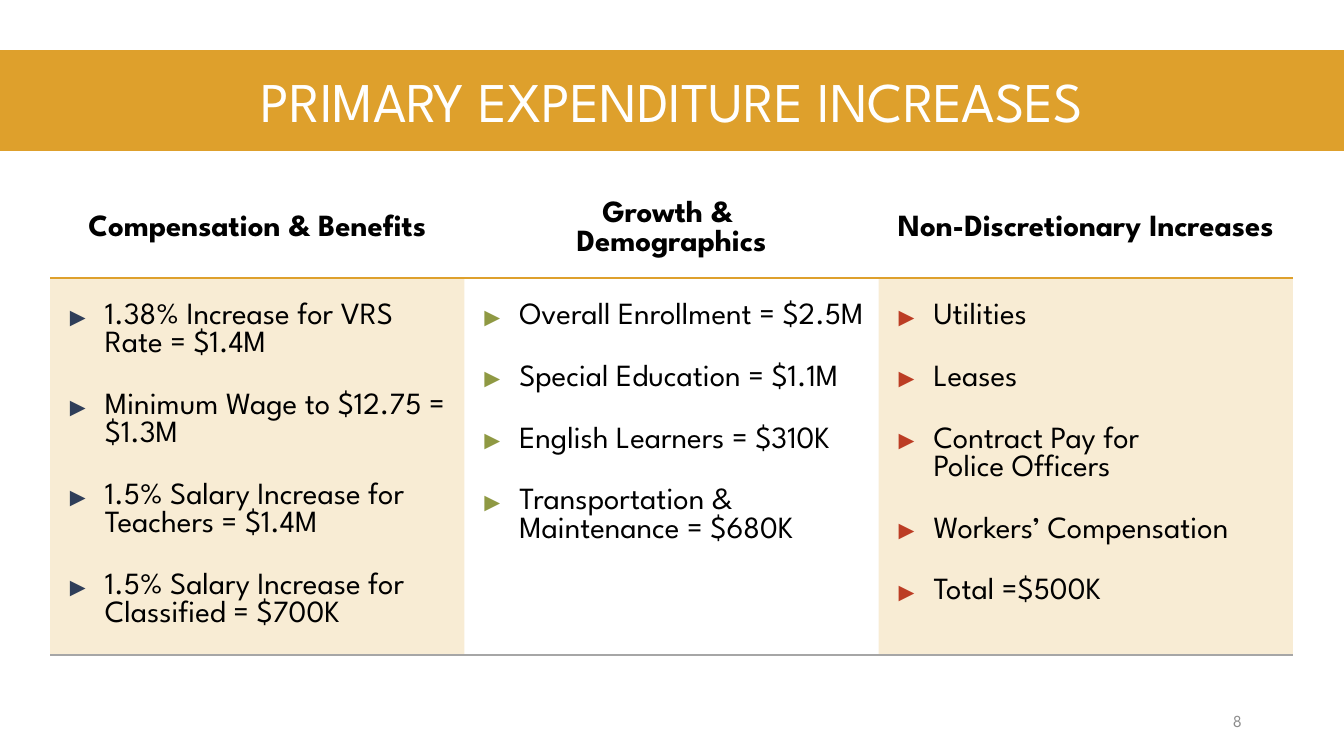
from dataclasses import dataclass

from lxml.etree import SubElement
from pptx import Presentation
from pptx.dml.color import RGBColor
from pptx.enum.shapes import MSO_SHAPE
from pptx.enum.text import MSO_ANCHOR, PP_ALIGN
from pptx.oxml import parse_xml
from pptx.oxml.ns import nsdecls, qn
from pptx.util import Pt

PLAIN = "{2D5ABB26-0587-4C30-8999-92F81FD0307C}"  # table style: no grid


@dataclass(frozen=True)
class Theme:
    font: str = "League Spartan"
    gold: str = "DEA02C"
    white: str = "FFFFFF"
    black: str = "000000"
    gray: str = "8C8C8C"
    rule: str = "A6A6A6"
    navy: str = "2F3E59"
    olive: str = "8F9943"
    red: str = "BC3D24"
    title: int = 40
    body: int = 22
    small: int = 12
    gap: int = 24


THEME = Theme()

COLUMNS = [
    ("Compensation & Benefits", THEME.navy, True, [
        "1.38% Increase for VRS Rate = $1.4M",
        "Minimum Wage to $12.75 = $1.3M",
        "1.5% Salary Increase for Teachers = $1.4M",
        "1.5% Salary Increase for Classified = $700K",
    ]),
    ("Growth & \nDemographics", THEME.olive, False, [
        "Overall Enrollment = $2.5M",
        "Special Education = $1.1M",
        "English Learners = $310K",
        "Transportation & Maintenance = $680K",
    ]),
    ("Non-Discretionary Increases", THEME.red, True, [
        "Utilities",
        "Leases",
        "Contract Pay for \nPolice Officers",
        "Workers’ Compensation",
        "Total =$500K",
    ]),
]


def px(count):
    """Turn slide pixels (100.8 to the inch) into EMU."""
    return round(count * 914400 / 100.8)


def write(para, text, size, color, align=PP_ALIGN.LEFT, bold=False):
    para.text = text
    para.alignment = align
    font = para.font
    font.name, font.size, font.bold = THEME.font, Pt(size), bold
    font.color.rgb = RGBColor.from_string(color)


def bullet(para, color):
    """Give a written paragraph a hanging triangle bullet."""
    props = para._p.get_or_add_pPr()
    props.set("marL", str(px(45)))
    props.set("indent", str(px(-40)))
    last = props.find(qn("a:defRPr"))
    for part in (
        f'<a:buClr {nsdecls("a")}><a:srgbClr val="{color}"/></a:buClr>',
        f'<a:buSzPct {nsdecls("a")} val="85000"/>',
        f'<a:buFont {nsdecls("a")} typeface="Arial"/>',
        f'<a:buChar {nsdecls("a")} char="►"/>',
    ):
        last.addprevious(parse_xml(part))


def pad(cell, side, top, bottom):
    cell.margin_left = cell.margin_right = px(side)
    cell.margin_top, cell.margin_bottom = px(top), px(bottom)


def tint(cell, shaded):
    """Fill a cell with pale gold, or leave it clear."""
    if not shaded:
        cell.fill.background()
        return
    cell.fill.solid()
    cell.fill.fore_color.rgb = RGBColor.from_string(THEME.gold)
    color = cell._tc.tcPr.find(".//" + qn("a:srgbClr"))
    SubElement(color, qn("a:alpha"), val="20000")


def edge(cell, side, color):
    """Draw a one-point border; side is T or B."""
    line = parse_xml(
        f'<a:ln{side} {nsdecls("a")} w="12700"><a:solidFill>'
        f'<a:srgbClr val="{color}"/></a:solidFill></a:ln{side}>')
    cell._tc.get_or_add_tcPr().insert(0, line)


def banner(slide, left, top, width, height):
    bar = slide.shapes.add_shape(
        MSO_SHAPE.RECTANGLE, px(left), px(top), px(width), px(height))
    bar.shadow.inherit = False
    bar.fill.solid()
    bar.fill.fore_color.rgb = RGBColor.from_string(THEME.gold)
    bar.line.fill.background()
    frame = bar.text_frame
    frame.margin_left = frame.margin_right = px(50)
    frame.vertical_anchor = MSO_ANCHOR.MIDDLE
    write(frame.paragraphs[0], "PRIMARY EXPENDITURE INCREASES",
          THEME.title, THEME.white, PP_ALIGN.CENTER)


def costs(slide, left, top, width, height):
    """Place the table: a row of headings above a row of lists."""
    head = 87
    grid = slide.shapes.add_table(
        2, len(COLUMNS), px(left), px(top), px(width), px(height)).table
    grid.first_row = grid.horz_banding = False
    grid._tbl.tblPr.find(qn("a:tableStyleId")).text = PLAIN
    grid.rows[0].height, grid.rows[1].height = px(head), px(height - head)

    for col, (name, color, shaded, items) in enumerate(COLUMNS):
        grid.columns[col].width = px(width / len(COLUMNS))
        title, cell = grid.cell(0, col), grid.cell(1, col)
        pad(title, 10, 10, 20)
        title.vertical_anchor = MSO_ANCHOR.MIDDLE
        write(title.text_frame.paragraphs[0], name, THEME.body,
              THEME.black, PP_ALIGN.CENTER, True)
        tint(title, False)
        edge(title, "B", THEME.gold)

        pad(cell, 10, 25, 25)
        frame = cell.text_frame
        for row, item in enumerate(items):
            para = frame.add_paragraph() if row else frame.paragraphs[0]
            write(para, item, THEME.body, THEME.black)
            para.space_after = Pt(THEME.gap)
            bullet(para, color)
        tint(cell, shaded)
        edge(cell, "B", THEME.rule)
        edge(cell, "T", THEME.gold)


def number(slide, left, top, width, height):
    frame = slide.shapes.add_textbox(
        px(left), px(top), px(width), px(height)).text_frame
    frame.word_wrap = True
    frame.vertical_anchor = MSO_ANCHOR.MIDDLE
    write(frame.paragraphs[0], "8", THEME.small, THEME.gray, PP_ALIGN.RIGHT)


def main():
    deck = Presentation()
    deck.slide_width, deck.slide_height = px(1344), px(756)
    slide = deck.slides.add_slide(deck.slide_layouts[6])
    banner(slide, 0, 50, 1344, 101)
    costs(slide, 50, 191, 1243, 464)
    number(slide, 950, 701, 302, 40)
    deck.save("out.pptx")


if __name__ == "__main__":
    main()
